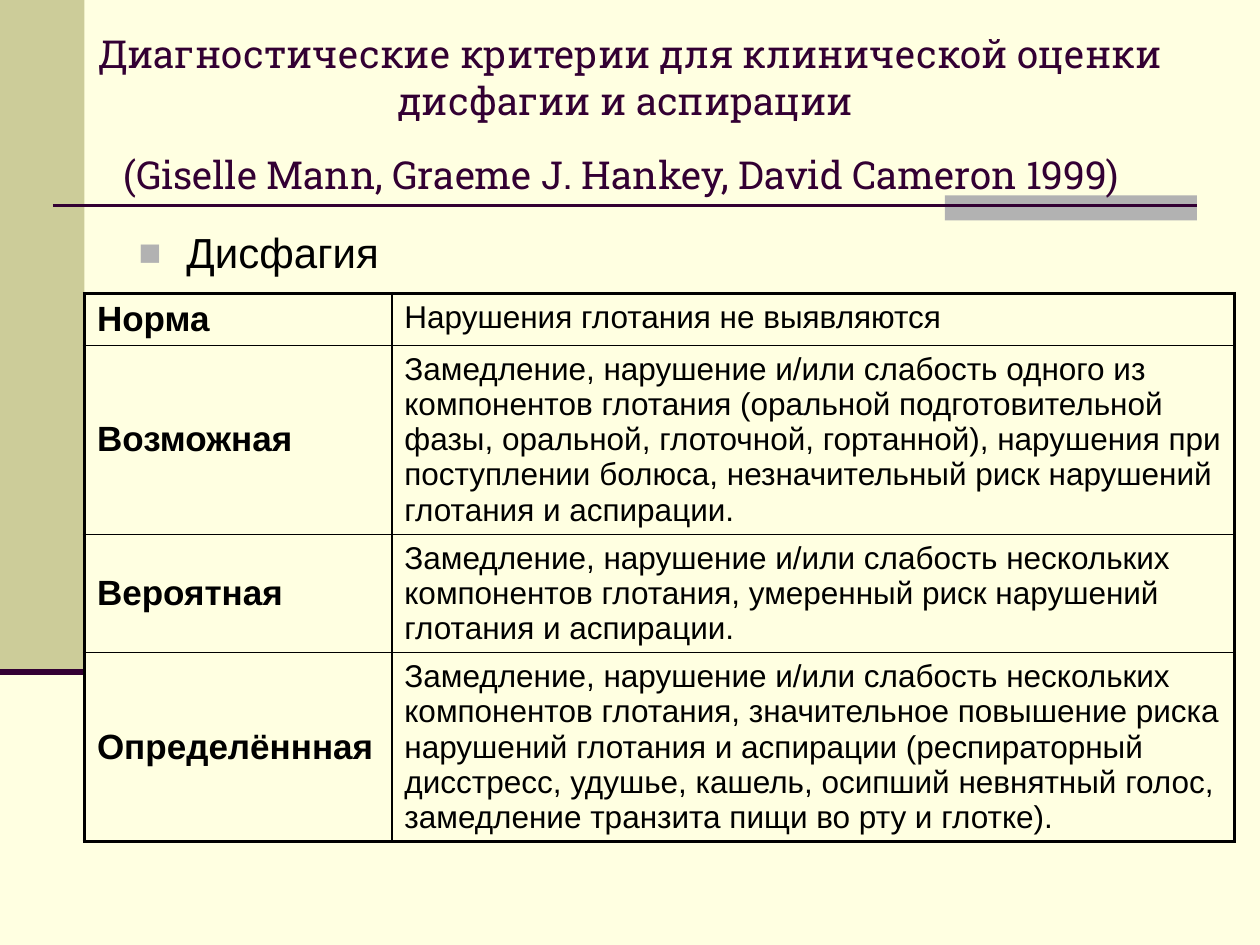
from lxml.etree import SubElement
from pptx import Presentation
from pptx.dml.color import RGBColor
from pptx.enum.shapes import MSO_CONNECTOR, MSO_SHAPE
from pptx.enum.text import MSO_ANCHOR, MSO_AUTO_SIZE, PP_ALIGN
from pptx.oxml.ns import qn
from pptx.util import Inches, Pt

COLORS = {
    "background": "FFFFE1",
    "band": "CCCC99",
    "accent": "B2B2B2",
    "plum": "330033",
    "text": "000000",
}
WIDTH, HEIGHT = 10, 7.5
BAND_WIDTH, BAND_HEIGHT = 0.67, 5.33
COLUMNS = [2.44, 6.69]
ROWS = [0.4, 1.5, 0.94, 1.5]
CRITERIA = [
    ("Норма", "Нарушения глотания не выявляются"),
    ("Возможная", "Замедление, нарушение и/или слабость одного из компонентов глотания "
     "(оральной подготовительной фазы, оральной, глоточной, гортанной), нарушения при "
     "поступлении болюса, незначительный риск нарушений глотания и аспирации."),
    ("Вероятная", "Замедление, нарушение и/или слабость нескольких компонентов глотания, "
     "умеренный риск нарушений глотания и аспирации."),
    ("Определённная", "Замедление, нарушение и/или слабость нескольких компонентов глотания, "
     "значительное повышение риска нарушений глотания и аспирации (респираторный дисстресс, "
     "удушье, кашель, осипший невнятный голос, замедление транзита пищи во рту и глотке)."),
]


def color(name):
    return RGBColor.from_string(COLORS[name])


def place(shape, box):
    shape.left, shape.top, shape.width, shape.height = map(Inches, box)


def add_run(paragraph, text, size, font="Arial", fill="text", bold=False):
    run = paragraph.add_run()
    run.text = text
    run.font.size = Pt(size)
    run.font.name = font
    run.font.bold = bold
    run.font.color.rgb = color(fill)


def add_block(slide, box, fill):
    shape = slide.shapes.add_shape(MSO_SHAPE.RECTANGLE, *map(Inches, box))
    shape.shadow.inherit = False
    shape.fill.solid()
    shape.fill.fore_color.rgb = color(fill)
    shape.line.fill.background()


def add_rule(slide, left, right, top, weight):
    line = slide.shapes.add_connector(
        MSO_CONNECTOR.STRAIGHT, Inches(left), Inches(top), Inches(right), Inches(top))
    line.line.color.rgb = color("plum")
    line.line.width = Pt(weight)
    SubElement(line._element.spPr, qn("a:effectLst"))


def add_decoration(slide):
    add_block(slide, (0, 0, BAND_WIDTH, BAND_HEIGHT), "band")
    add_block(slide, (0.75 * WIDTH, 1.55, 0.2 * WIDTH, 0.2), "accent")
    add_rule(slide, 0.42, 0.95 * WIDTH, 1.63, 1.5)
    add_rule(slide, 0, BAND_WIDTH, BAND_HEIGHT, 3.5)


def fill_title(title, box):
    place(title, box)
    frame = title.text_frame
    frame.auto_size = MSO_AUTO_SIZE.NONE
    frame.vertical_anchor = MSO_ANCHOR.MIDDLE
    paragraph = frame.paragraphs[0]
    paragraph.alignment = PP_ALIGN.CENTER
    add_run(paragraph, "Диагностические критерии для клинической оценки дисфагии и аспирации ",
            22, "Roboto Slab", "plum")
    paragraph.add_line_break()
    add_run(paragraph, "(Giselle Mann, Graeme J. Hankey, David Cameron 1999)",
            22, "Roboto Slab", "plum")
    add_run(paragraph, " ", 38, "Times New Roman", "plum")


def fill_body(body, box):
    place(body, box)
    frame = body.text_frame
    frame.auto_size = MSO_AUTO_SIZE.NONE
    paragraph = frame.paragraphs[0]
    paragraph.space_before = Pt(0)
    properties = paragraph._p.get_or_add_pPr()
    properties.set("marL", str(Inches(0.38)))
    properties.set("indent", str(Inches(-0.38)))
    bullet_color = SubElement(properties, qn("a:buClr"))
    SubElement(bullet_color, qn("a:srgbClr"), val=COLORS["accent"])
    SubElement(properties, qn("a:buSzPct"), val="90000")
    SubElement(properties, qn("a:buFont"), typeface="Arial")
    SubElement(properties, qn("a:buChar"), char="■")
    add_run(paragraph, "Дисфагия", 24)


def set_borders(cell, outer_sides):
    properties = cell._tc.get_or_add_tcPr()
    for side in "LRTB":
        weight = 2.25 if side in outer_sides else 1
        line = SubElement(properties, qn(f"a:ln{side}"), w=str(Pt(weight)))
        fill = SubElement(line, qn("a:solidFill"))
        SubElement(fill, qn("a:srgbClr"), val=COLORS["text"])


def add_criteria_table(slide, left, top):
    table = slide.shapes.add_table(
        len(ROWS), len(COLUMNS), Inches(left), Inches(top),
        Inches(sum(COLUMNS)), Inches(sum(ROWS))).table
    table.first_row = table.horz_banding = False
    for column, width in zip(table.columns, COLUMNS):
        column.width = Inches(width)
    for row_index, (row, height, texts) in enumerate(zip(table.rows, ROWS, CRITERIA)):
        row.height = Inches(height)
        vertical = {0: "T", len(ROWS) - 1: "B"}.get(row_index, "")
        for cell, text, side in zip(row.cells, texts, "LR"):
            is_label = side == "L"
            set_borders(cell, side + vertical)
            cell.fill.background()
            cell.vertical_anchor = MSO_ANCHOR.MIDDLE if is_label else MSO_ANCHOR.TOP
            add_run(cell.text_frame.paragraphs[0], text, 20 if is_label else 18, bold=is_label)


def build_slide(presentation):
    slide = presentation.slides.add_slide(presentation.slide_layouts[1])
    slide.background.fill.solid()
    slide.background.fill.fore_color.rgb = color("background")
    add_decoration(slide)
    title, body = slide.shapes.title, slide.placeholders[1]
    fill_title(title, (0, 0.3, WIDTH, 1.25))
    fill_body(body, (0.1 * WIDTH, 1.75, 4.17, 4.95))
    for shape in (title, body):
        slide.shapes._spTree.append(shape._element)
    add_criteria_table(slide, BAND_WIDTH, 2.33)


def main():
    presentation = Presentation()
    presentation.slide_width = Inches(WIDTH)
    presentation.slide_height = Inches(HEIGHT)
    build_slide(presentation)
    presentation.save("out.pptx")


if __name__ == "__main__":
    main()
